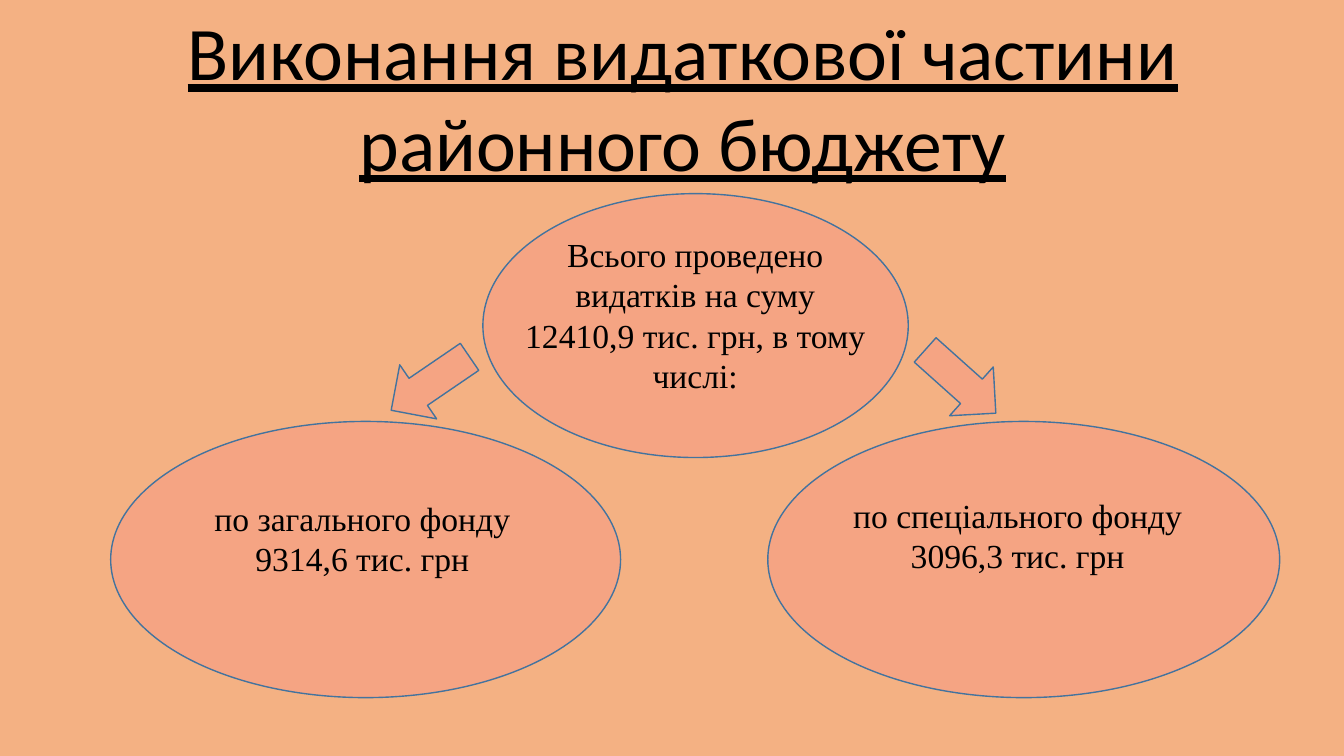
from pptx import Presentation
from pptx.dml.color import RGBColor
from pptx.enum.shapes import MSO_SHAPE as SHAPE
from pptx.enum.text import MSO_AUTO_SIZE as AUTO, PP_ALIGN as ALIGN
from pptx.util import Cm, Pt

BACKGROUND = RGBColor(0xF4, 0xB1, 0x83)
FILL = RGBColor(0xF5, 0xA4, 0x83)
OUTLINE = RGBColor(0x43, 0x73, 0x9E)
BLACK = RGBColor(0, 0, 0)

# Boxes are left, top, width, height in centimetres
TITLE = ["Виконання видаткової частини", "районного бюджету"]
TITLE_BOX = (4.34, 0, 25.73, 4.88)
ELLIPSES = [
    (12.17, 4.88, 10.72, 6.65),
    (2.79, 10.62, 12.85, 6.96),
    (19.35, 10.62, 12.9, 6.96),
]
ARROW_SIZE = (2.39, 1.65)
ARROWS = [(23.01, 8.79, 41.8), (9.65, 8.84, 145.7)]  # left, top, rotation
LABELS = [
    ("Всього проведено видатків на суму 12410,9 тис. грн, в тому числі:",
     (12.95, 5.77, 9.14, 4.37)),
    ("по загального фонду 9314,6 тис. грн", (4.29, 12.42, 9.68, 2.31)),
    ("по спеціального фонду 3096,3 тис. грн", (20.45, 12.34, 10.39, 2.31)),
]


def add_figure(s, kind, box, rotation=0):
    sp = s.shapes.add_shape(kind, *map(Cm, box))
    sp.rotation = rotation
    sp.shadow.inherit = False
    sp.fill.solid()
    sp.fill.fore_color.rgb = FILL
    sp.line.color.rgb = OUTLINE
    sp.line.width = Pt(1)


def add_text(s, lines, box, font, size, wrap=True, underline=None):
    tf = s.shapes.add_textbox(*map(Cm, box)).text_frame
    tf.word_wrap = wrap
    tf.auto_size = AUTO.SHAPE_TO_FIT_TEXT
    tf.text = "\n".join(lines)
    for p in tf.paragraphs:
        p.alignment = ALIGN.CENTER
        p.font.name = font
        p.font.size = Pt(size)
        p.font.color.rgb = BLACK
        p.font.underline = underline


def main():
    prs = Presentation()
    prs.slide_width, prs.slide_height = Cm(33.87), Cm(19.05)
    s = prs.slides.add_slide(prs.slide_layouts[6])
    s.background.fill.solid()
    s.background.fill.fore_color.rgb = BACKGROUND

    add_text(s, TITLE, TITLE_BOX, "Calibri", 54, wrap=False, underline=True)
    for box in ELLIPSES:
        add_figure(s, SHAPE.OVAL, box)
    for left, top, rotation in ARROWS:
        add_figure(s, SHAPE.RIGHT_ARROW, (left, top, *ARROW_SIZE), rotation)
    for text, box in LABELS:
        add_text(s, [text], box, "Times New Roman", 24)

    prs.save("out.pptx")


if __name__ == "__main__":
    main()
